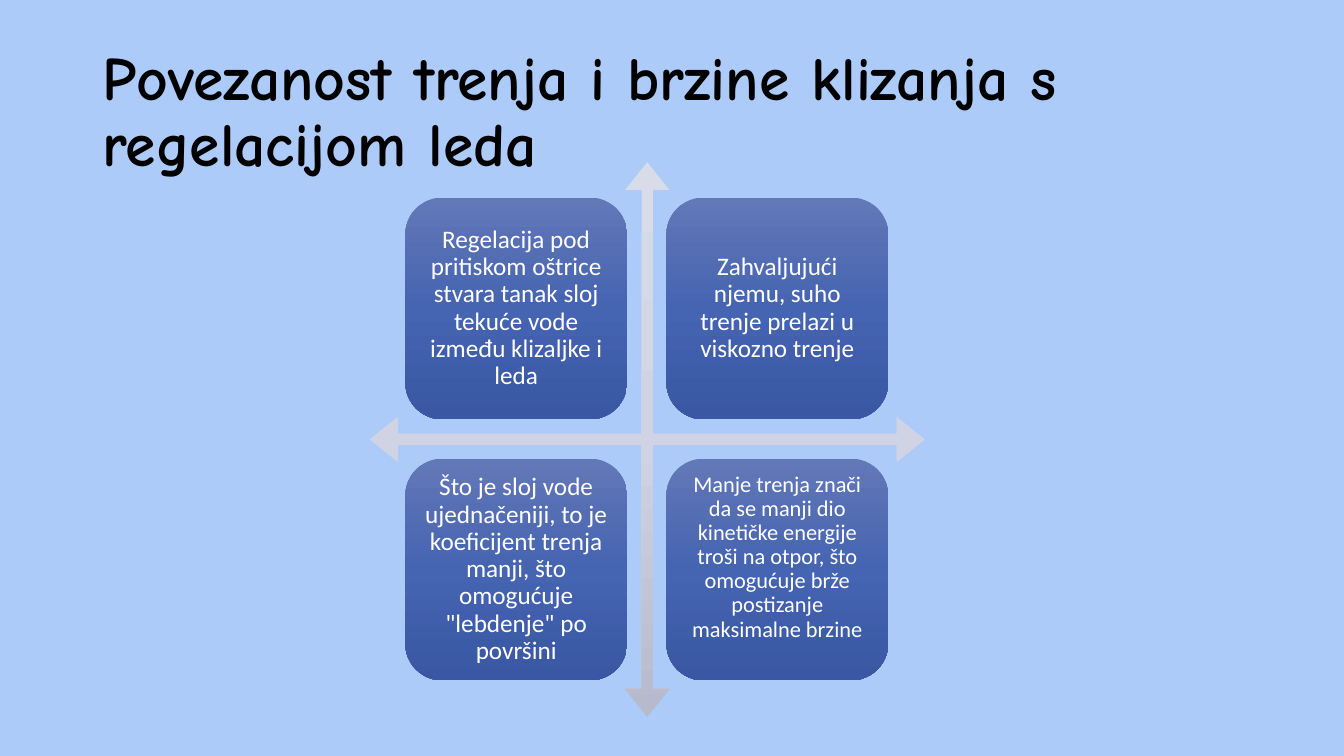
import copy

import pptx
import pptx.dml.color
import pptx.enum.shapes
import pptx.enum.text
import pptx.util
from pptx.oxml.ns import qn

RGBColor = pptx.dml.color.RGBColor
Inches = pptx.util.Inches
Shapes = pptx.enum.shapes.MSO_SHAPE
Align = pptx.enum.text.PP_ALIGN

BACKGROUND = RGBColor(0xAC, 0xCB, 0xF9)
BLACK = RGBColor(0x00, 0x00, 0x00)
WHITE = RGBColor(0xFF, 0xFF, 0xFF)
ARROW_COLORS = (RGBColor(0xD8, 0xDB, 0xE8), RGBColor(0xCF, 0xD3, 0xE3), RGBColor(0xB6, 0xBA, 0xCC))
CARD_COLORS = (RGBColor(0x63, 0x78, 0xB7), RGBColor(0x45, 0x64, 0xB1), RGBColor(0x39, 0x57, 0xA2))

TITLE = "Povezanost trenja i brzine klizanja s regelacijom leda"
CARDS = [
    ("Regelacija pod pritiskom oštrice stvara tanak sloj tekuće vode između klizaljke i leda", 18, 0.07),
    ("Zahvaljujući njemu, suho trenje prelazi u viskozno trenje", 18, 0.07),
    ('Što je sloj vode ujednačeniji, to je koeficijent trenja manji, što omogućuje "lebdenje" po površini', 18, 0.07),
    ("Manje trenja znači da se manji dio kinetičke energije troši na otpor, "
     "što omogućuje brže postizanje maksimalne brzine", 16, 0.31),
]
CARD_LEFT, CARD_TOP, CARD_SIZE, CARD_STEP = 4.02, 1.96, 2.2, 2.59


def write_text(frame, text, *, font, size, color, align, bold=False):
    frame.word_wrap = True
    frame.auto_size = pptx.enum.text.MSO_AUTO_SIZE.NONE
    frame.vertical_anchor = pptx.enum.text.MSO_ANCHOR.MIDDLE
    para = frame.paragraphs[0]
    para.alignment = align
    para.line_spacing = 0.9
    span = para.add_run()
    span.text = text
    span.font.name = font
    span.font.size = pptx.util.Pt(size)
    span.font.bold = bold
    span.font.color.rgb = color


def fill_gradient(shape, colors):
    shape.fill.gradient()
    shape.fill.gradient_angle = 270
    stop_list = shape._element.spPr.find(qn("a:gradFill")).find(qn("a:gsLst"))
    stop_list.insert(1, copy.deepcopy(stop_list[0]))
    for index, (stop, color) in enumerate(zip(shape.fill.gradient_stops, colors)):
        stop.position = index / 2
        stop.color.rgb = color


def add_gradient_shape(page, kind, left, top, size, colors):
    shape = page.shapes.add_shape(kind, Inches(left), Inches(top), Inches(size), Inches(size))
    shape.shadow.inherit = False
    shape.line.fill.background()
    fill_gradient(shape, colors)
    return shape


def add_title(page):
    title = page.shapes.title
    title.left, title.top = Inches(0.92), Inches(0.4)
    title.width, title.height = Inches(11.5), Inches(1.45)
    write_text(title.text_frame, TITLE, font="Comic Neue", size=44, color=BLACK,
               align=Align.LEFT, bold=True)


def add_axes(page):
    arrow = add_gradient_shape(page, Shapes.QUAD_ARROW, 3.67, 1.61, 5.5, ARROW_COLORS)
    for index, value in enumerate((0.02, 0.04, 0.05)):
        arrow.adjustments[index] = value


def add_card(page, index, text, size, bottom_margin):
    row, column = divmod(index, 2)
    card = add_gradient_shape(page, Shapes.ROUNDED_RECTANGLE, CARD_LEFT + column * CARD_STEP,
                              CARD_TOP + row * CARD_STEP, CARD_SIZE, CARD_COLORS)
    frame = card.text_frame
    frame.margin_left = frame.margin_right = frame.margin_top = Inches(0.07)
    frame.margin_bottom = Inches(bottom_margin)
    write_text(frame, text, font="Calibri", size=size, color=WHITE, align=Align.CENTER)


def main():
    deck = pptx.Presentation()
    deck.slide_width, deck.slide_height = Inches(13.33), Inches(7.5)
    page = deck.slides.add_slide(deck.slide_layouts[5])
    page.background.fill.solid()
    page.background.fill.fore_color.rgb = BACKGROUND
    add_title(page)
    add_axes(page)
    for index, (text, size, bottom_margin) in enumerate(CARDS):
        add_card(page, index, text, size, bottom_margin)
    deck.save("out.pptx")


if __name__ == "__main__":
    main()
